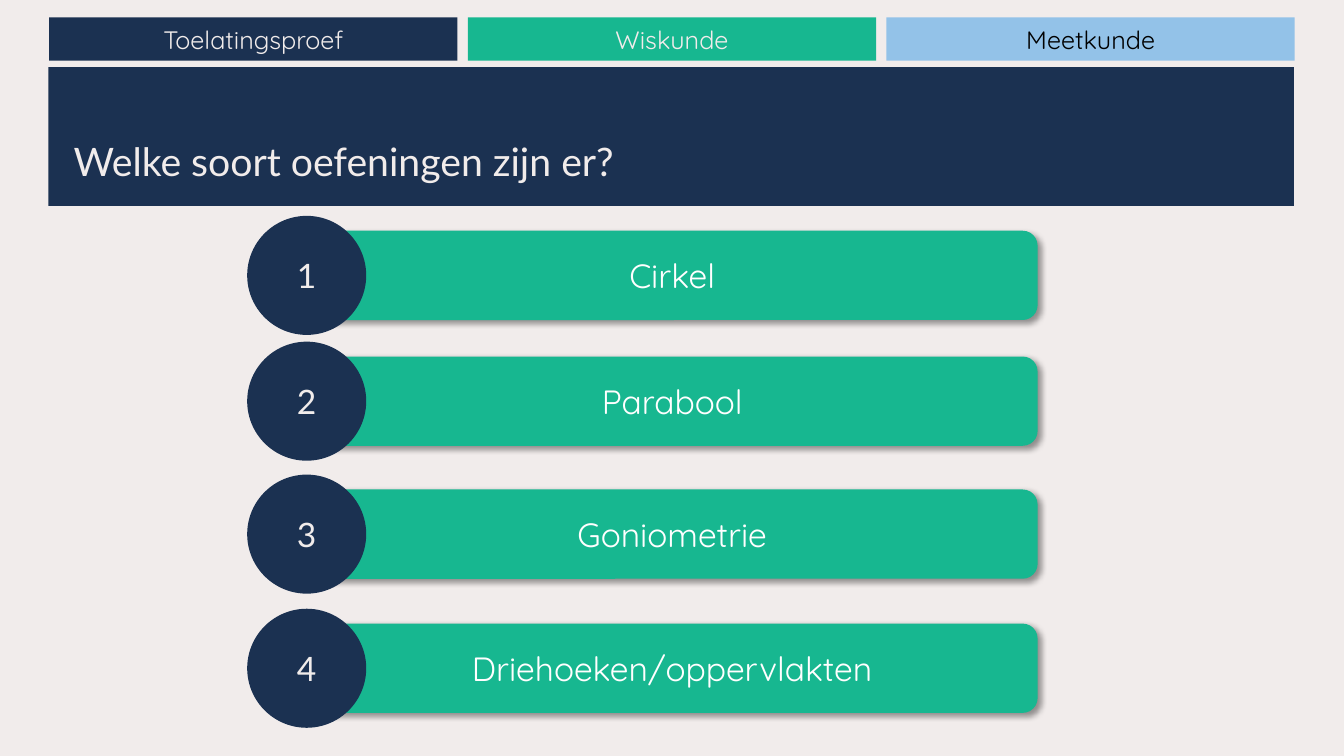
from dataclasses import dataclass

from lxml.etree import SubElement
from pptx import Presentation
from pptx.dml.color import RGBColor
from pptx.enum.shapes import MSO_SHAPE as Shape
from pptx.enum.text import MSO_ANCHOR as Anchor, MSO_AUTO_SIZE as AutoSize, PP_ALIGN as Align
from pptx.oxml.ns import qn
from pptx.util import Cm, Pt


@dataclass(frozen=True)
class Theme:
    paper: str = "F1ECEB"
    navy: str = "1B3151"
    green: str = "17B790"
    sky: str = "93C2E8"
    black: str = "000000"
    white: str = "FFFFFF"
    heading_font: str = "Lato"
    body_font: str = "Quicksand"
    title_size: int = 28
    item_size: int = 24
    tab_size: int = 18


THEME = Theme()
TABS = [
    ("Toelatingsproef", THEME.navy, THEME.paper),
    ("Wiskunde", THEME.green, THEME.paper),
    ("Meetkunde", THEME.sky, THEME.black),
]
EXERCISES = ["Cirkel", "Parabool", "Goniometrie", "Driehoeken/oppervlakten"]
EXERCISE_TOPS = [5.44, 8.61, 11.96, 15.34]


def add_block(slide, kind, left, top, width, height, fill):
    block = slide.shapes.add_shape(kind, Cm(left), Cm(top), Cm(width), Cm(height))
    block.shadow.inherit = False
    block.fill.solid()
    block.fill.fore_color.rgb = RGBColor.from_string(fill)
    block.line.fill.background()
    return block


def write(block, text, font_name, size, color, align=Align.CENTER, anchor=Anchor.MIDDLE):
    frame = block.text_frame
    frame.text = text
    frame.word_wrap = True
    frame.auto_size = AutoSize.NONE
    frame.vertical_anchor = anchor
    paragraph = frame.paragraphs[0]
    paragraph.alignment = align
    paragraph.font.name = font_name
    paragraph.font.size = Pt(size)
    paragraph.font.color.rgb = RGBColor.from_string(color)


def cast_shadow(block):
    effects = block.element.spPr.find(qn("a:effectLst"))
    outer = SubElement(effects, qn("a:outerShdw"), blurRad=str(Pt(4)), dist=str(Pt(3)),
                       dir="2700000", algn="tl", rotWithShape="0")
    color = SubElement(outer, qn("a:srgbClr"), val=THEME.black)
    SubElement(color, qn("a:alpha"), val="40000")


def add_tabs(slide, left, top, width, height, gap=0.26):
    tab_width = (width - gap * (len(TABS) - 1)) / len(TABS)
    for index, (label, fill, color) in enumerate(TABS):
        tab = add_block(slide, Shape.RECTANGLE, left + index * (tab_width + gap), top,
                        tab_width, height, fill)
        write(tab, label, THEME.body_font, THEME.tab_size, color)


def add_banner(slide, text, left, top, width, height):
    banner = add_block(slide, Shape.RECTANGLE, left, top, width, height, THEME.navy)
    title = slide.shapes.title
    title.left, title.top = Cm(left + 0.38), Cm(top + 0.35)
    title.width, title.height = Cm(width - 0.76), Cm(height - 0.76)
    write(title, text, THEME.heading_font, THEME.title_size, THEME.paper,
          Align.LEFT, Anchor.BOTTOM)
    banner.element.addnext(title.element)


def add_exercise(slide, number, name, left, top, width, diameter):
    bar_height = diameter * 0.75
    bar = add_block(slide, Shape.ROUNDED_RECTANGLE, left + diameter / 2,
                    top + (diameter - bar_height) / 2, width - diameter / 2,
                    bar_height, THEME.green)
    cast_shadow(bar)
    write(bar, name, THEME.body_font, THEME.item_size, THEME.white)
    badge = add_block(slide, Shape.OVAL, left, top, diameter, diameter, THEME.navy)
    write(badge, str(number), THEME.heading_font, THEME.item_size, THEME.paper)


def main():
    deck = Presentation()
    deck.slide_width, deck.slide_height = Cm(33.87), Cm(19.05)
    slide = deck.slides.add_slide(deck.slide_layouts[5])
    slide.background.fill.solid()
    slide.background.fill.fore_color.rgb = RGBColor.from_string(THEME.paper)

    add_tabs(slide, 1.24, 0.44, 31.39, 1.09)
    add_banner(slide, "Welke soort oefeningen zijn er?", 1.22, 1.69, 31.39, 3.5)
    for number, (name, top) in enumerate(zip(EXERCISES, EXERCISE_TOPS), 1):
        add_exercise(slide, number, name, 6.23, top, 19.92, 3)

    deck.save("out.pptx")


if __name__ == "__main__":
    main()
